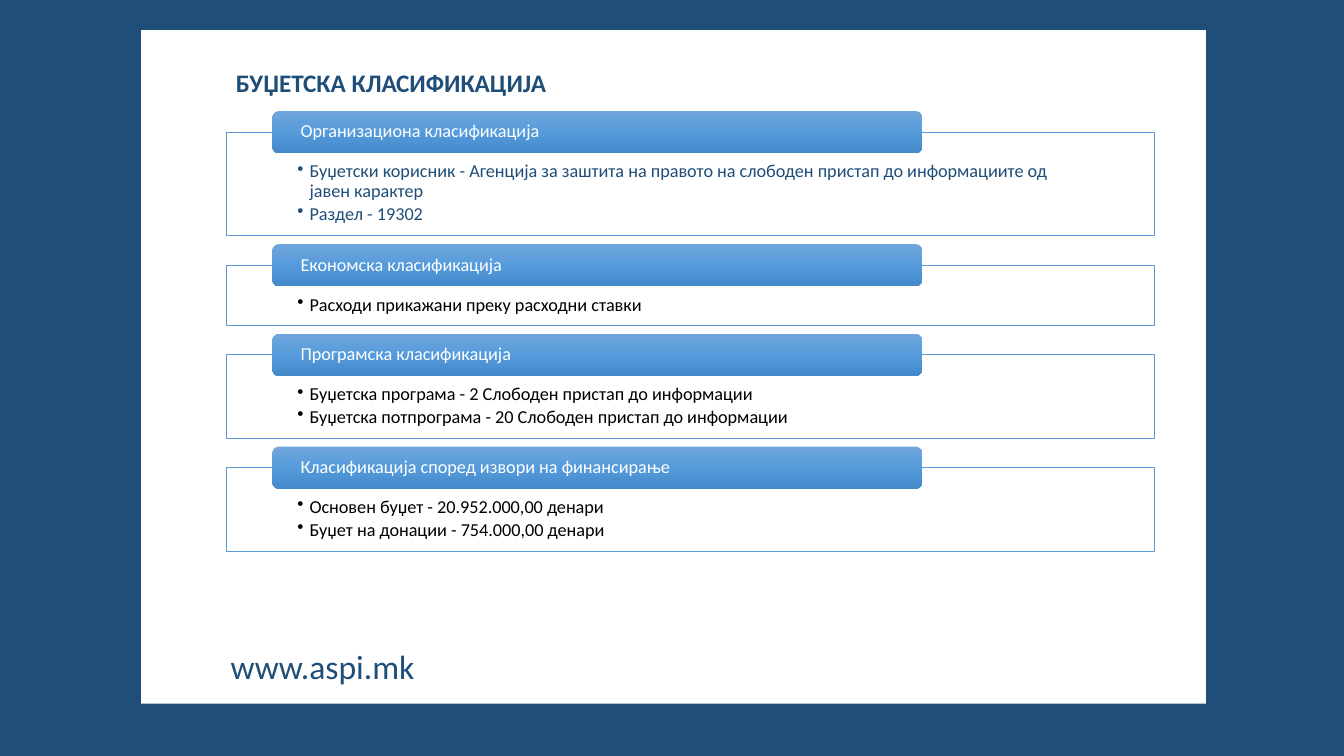
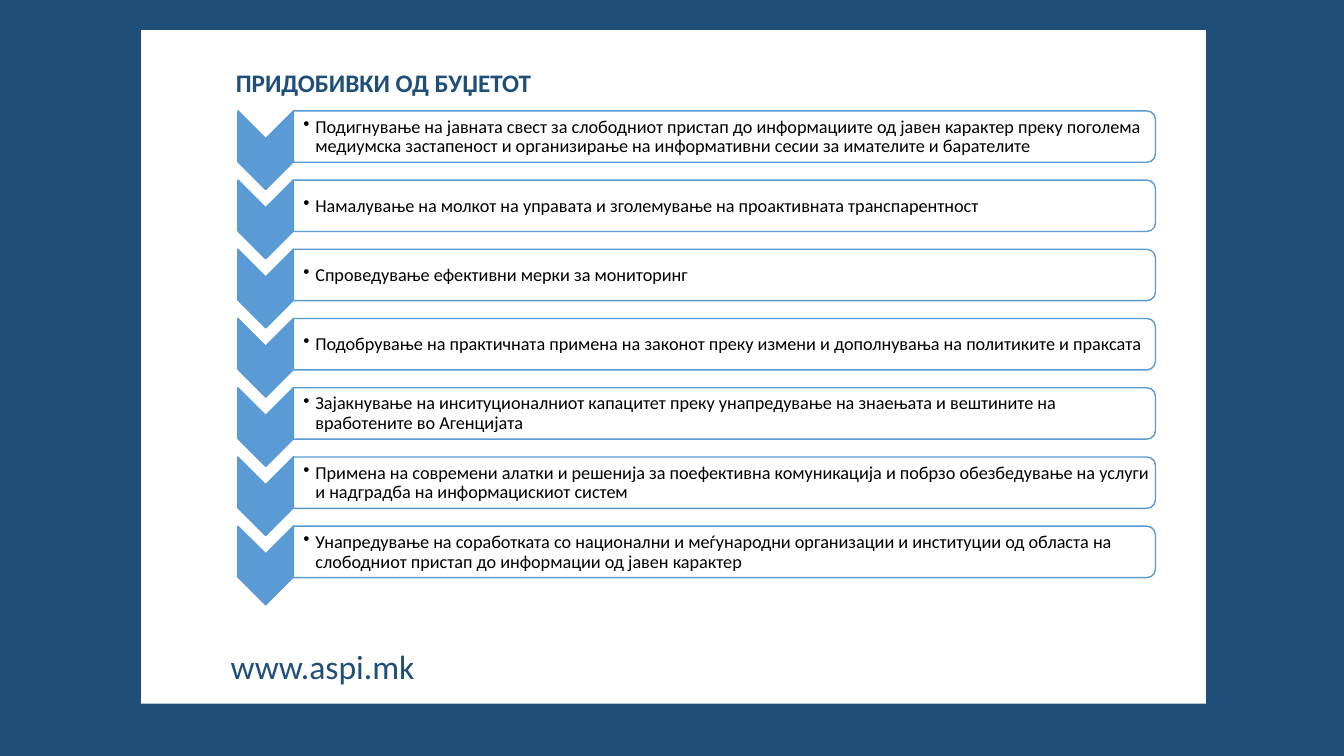
from copy import deepcopy

from lxml.etree import SubElement
from pptx import Presentation
from pptx.dml.color import RGBColor
from pptx.enum.shapes import MSO_SHAPE
from pptx.enum.text import MSO_ANCHOR
from pptx.oxml.ns import qn
from pptx.util import Inches, Pt

W, H = 13.33, 7.5
FONT = "Calibri"
NAVY, BLUE, WHITE, BLACK = "1F4E79", "5B9BD5", "FFFFFF", "000000"
BAR_STOPS = [(0, "71A6DB"), (0.5, "559BDB"), (1, "448ACA")]

CLASSES = [
    ("Организациона класификација", NAVY, 1, [
        "Буџетски корисник - Агенција за заштита на правото на слободен пристап до информациите од јавен карактер",
        "Раздел - 19302"]),
    ("Економска класификација", BLACK, 0, [
        "Расходи прикажани преку расходни ставки"]),
    ("Програмска класификација", BLACK, 0, [
        "Буџетска програма - 2 Слободен пристап до информации",
        "Буџетска потпрограма - 20 Слободен пристап до информации"]),
    ("Класификација според извори на финансирање", BLACK, 0, [
        "Основен буџет - 20.952.000,00 денари",
        "Буџет на донации - 754.000,00 денари"]),
]

BENEFITS = [
    "Подигнување на јавната свест за слободниот пристап до информациите од јавен карактер преку поголема медиумска застапеност и организирање на информативни сесии за имателите и барателите",
    "Намалување на молкот на управата и зголемување на проактивната транспарентност",
    "Спроведување ефективни мерки за мониторинг",
    "Подобрување на практичната примена на законот преку измени и дополнувања на политиките и праксата",
    "Зајакнување на инситуционалниот капацитет преку унапредување на знаењата и вештините на вработените во Агенцијата",
    "Примена на современи алатки и решенија за поефективна комуникација и побрзо обезбедување на услуги и надградба на информацискиот систем",
    "Унапредување на соработката со национални и меѓународни организации и институции од областа на слободниот пристап до информации од јавен карактер",
]


def rgb(color):
    """Turn a hex string into a colour."""
    return RGBColor.from_string(color)


def add_box(s, kind, x, y, w, h, fill, line=None, width=1):
    """Add a flat preset shape."""
    sp = s.shapes.add_shape(kind, Inches(x), Inches(y), Inches(w), Inches(h))
    sp.shadow.inherit = False
    sp.fill.solid()
    sp.fill.fore_color.rgb = rgb(fill)
    if line:
        sp.line.color.rgb = rgb(line)
        sp.line.width = Pt(width)
    else:
        sp.line.fill.background()
    return sp


def add_turned(s, kind, x, y, w, h, fill):
    """Add a blue-edged shape turned by 90 degrees that covers the given box."""
    sp = add_box(s, kind, x + (w - h) / 2, y + (h - w) / 2, h, w, fill, BLUE)
    sp.rotation = 90


def shade(sp, stops):
    """Fill a shape with a gradient running from top to bottom."""
    sp.fill.gradient()
    sp.fill.gradient_angle = 270
    gs_list = sp._element.spPr.find(qn("a:gradFill")).find(qn("a:gsLst"))
    while len(gs_list) < len(stops):
        gs_list.append(deepcopy(gs_list[0]))
    for stop, (position, color) in zip(sp.fill.gradient_stops, stops):
        stop.position = position
        stop.color.rgb = rgb(color)


def style(p, size, color, bold=False):
    """Format the runs of a paragraph."""
    for r in p.runs:
        r.font.name, r.font.size, r.font.bold = FONT, Pt(size), bold
        r.font.color.rgb = rgb(color)


def fill_frame(tf, lines, color, insets, anchor, bullet):
    """Write left-aligned body lines into a text frame."""
    tf.word_wrap = True
    tf.vertical_anchor = anchor
    tf.margin_left, tf.margin_top, tf.margin_right, tf.margin_bottom = map(Inches, insets)
    tf.text = "\n".join(lines)
    for p in tf.paragraphs:
        pPr = p._p.get_or_add_pPr()
        pPr.set("algn", "l")
        if bullet:
            pPr.set("marL", str(Inches(0.12)))
            pPr.set("indent", str(Inches(-0.12)))
            SubElement(pPr, qn("a:buChar")).set("char", "•")
        p.line_spacing = 0.9
        p.space_after = Pt(2)
        style(p, 13, color)


def add_label(s, x, y, w, h, text, size, bold=False):
    """Add a one-line navy label."""
    tf = s.shapes.add_textbox(Inches(x), Inches(y), Inches(w), Inches(h)).text_frame
    tf.word_wrap = False
    tf.text = text
    style(tf.paragraphs[0], size, NAVY, bold)


def add_page(prs, title):
    """Add a slide with the navy surround, white page, title and footer."""
    s = prs.slides.add_slide(prs.slide_layouts[6])
    s.background.fill.solid()
    s.background.fill.fore_color.rgb = rgb(NAVY)
    add_box(s, MSO_SHAPE.RECTANGLE, 1.4, 0.3, 10.56, 6.68, WHITE)
    add_label(s, 2.19, 6.36, 2.04, 0.5, "www.aspi.mk", 24)
    add_label(s, 2.24, 0.62, 3.31, 0.4, title, 18, True)
    return s


def add_class_list(s, x, y, w, classes):
    """Stack outlined panels, each headed by a bar across its top edge."""
    bar_h, gap = 0.42, 0.29
    top = y + bar_h / 2
    for heading, color, wraps, lines in classes:
        h = 0.37 + 0.23 * len(lines) + 0.2 * wraps
        panel = add_box(s, MSO_SHAPE.RECTANGLE, x, top, w, h, WHITE, BLUE, 0.5)
        fill_frame(panel.text_frame, lines, color, (0.71, 0.3, 0.71, 0.1),
                   MSO_ANCHOR.TOP, True)
        bar = add_box(s, MSO_SHAPE.ROUNDED_RECTANGLE, x + 0.05 * w, top - bar_h / 2,
                      0.7 * w, bar_h, BLUE)
        shade(bar, BAR_STOPS)
        fill_frame(bar.text_frame, [heading], WHITE, (0.26, 0, 0.26, 0),
                   MSO_ANCHOR.MIDDLE, False)
        top += h + gap


def add_chevron_list(s, x, y, w, h, items):
    """Spread rows of a downward chevron and a rounded panel over a box."""
    chev_w, chev_h, panel_h = 0.55, 0.78, 0.51
    pitch = (h - chev_h) / (len(items) - 1)
    left, panel_w = x + chev_w, w - chev_w
    for i, item in enumerate(items):
        top = y + i * pitch
        add_turned(s, MSO_SHAPE.CHEVRON, x, top, chev_w, chev_h, BLUE)
        add_turned(s, MSO_SHAPE.ROUND_2_SAME_RECTANGLE, left, top, panel_w, panel_h, WHITE)
        box = s.shapes.add_textbox(Inches(left), Inches(top + 0.03),
                                   Inches(panel_w - 0.02), Inches(panel_h - 0.05))
        fill_frame(box.text_frame, [item], BLACK, (0.1, 0.01, 0.01, 0.01),
                   MSO_ANCHOR.MIDDLE, True)


def main():
    """Build and save the presentation."""
    prs = Presentation()
    prs.slide_width, prs.slide_height = Inches(W), Inches(H)
    s = add_page(prs, "БУЏЕТСКА КЛАСИФИКАЦИЈА")
    add_class_list(s, 2.24, 1.1, 9.21, CLASSES)
    s = add_page(prs, "ПРИДОБИВКИ ОД БУЏЕТОТ")
    add_chevron_list(s, 2.36, 1.1, 9.1, 4.9, BENEFITS)
    prs.save("out.pptx")


if __name__ == "__main__":
    main()
